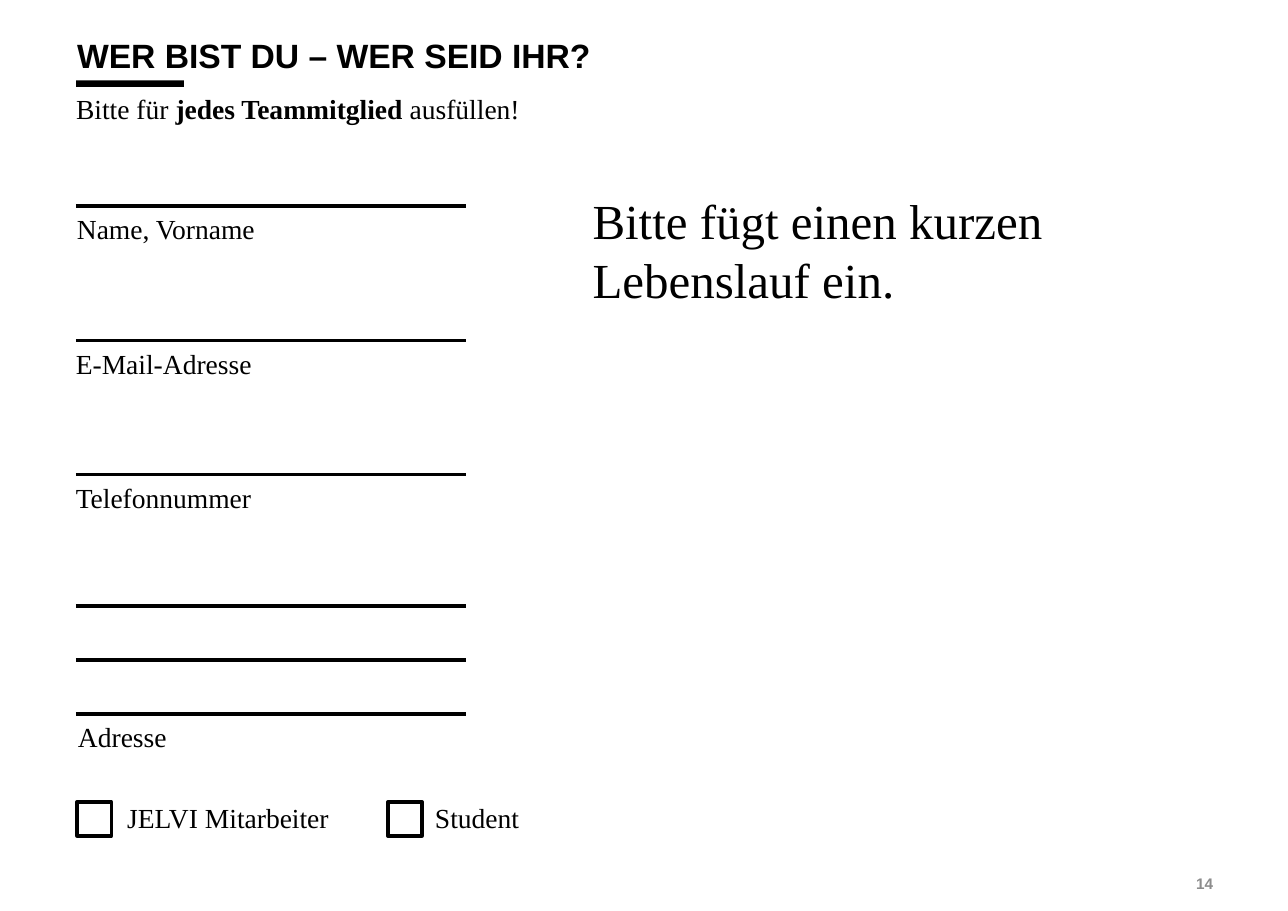
from lxml.etree import SubElement
from pptx import Presentation
from pptx.dml.color import RGBColor
from pptx.enum.shapes import MSO_CONNECTOR, MSO_SHAPE
from pptx.enum.text import MSO_ANCHOR, MSO_AUTO_SIZE, PP_ALIGN
from pptx.oxml.ns import qn
from pptx.util import Inches, Pt

BLACK = RGBColor(0, 0, 0)
WHITE = RGBColor(255, 255, 255)
GREY = RGBColor(0x8C, 0x8C, 0x8C)
SERIF = "Times New Roman"


def add_box(left, top, width, height):
    box = slide.shapes.add_shape(
        MSO_SHAPE.RECTANGLE, Inches(left), Inches(top), Inches(width), Inches(height))
    box.shadow.inherit = False
    box.fill.solid()
    box.fill.fore_color.rgb = WHITE
    box.line.fill.background()
    return box


def style_text(frame, size, font=SERIF, color=BLACK, align=PP_ALIGN.LEFT, anchor=MSO_ANCHOR.MIDDLE):
    frame.word_wrap = True
    frame.auto_size = MSO_AUTO_SIZE.NONE
    frame.vertical_anchor = anchor
    paragraph = frame.paragraphs[0]
    paragraph.alignment = align
    paragraph.font.size = Pt(size)
    paragraph.font.name = font
    paragraph.font.color.rgb = color
    return paragraph


presentation = Presentation()
presentation.slide_width = Inches(11.69)
presentation.slide_height = Inches(8.27)
slide = presentation.slides.add_slide(presentation.slide_layouts[1])

accent_bar = add_box(0.69, 0.73, 0.98, 0.06)
accent_bar.fill.fore_color.rgb = BLACK

page_number = slide.shapes.add_textbox(Inches(8.88), Inches(7.84), Inches(2.23), Inches(0.35))
page_number.text_frame.text = "14"
number_line = style_text(page_number.text_frame, 10, "Arial", GREY, PP_ALIGN.RIGHT)
number_line.font.bold = True

heading = slide.shapes.title
heading.text_frame.text = "WER BIST DU – WER SEID IHR?"
heading_line = style_text(heading.text_frame, 22, "Arial", anchor=MSO_ANCHOR.TOP)
heading_line.font.bold = True

instruction = slide.placeholders[1]
instruction_line = instruction.text_frame.paragraphs[0]
for text, bold in [("Bitte für ", False), ("jedes Teammitglied ", True), ("ausfüllen!", False)]:
    run = instruction_line.add_run()
    run.text = text
    run.font.bold = bold
properties = instruction_line._p.get_or_add_pPr()
properties.set("marL", "0")
properties.set("indent", "0")
SubElement(properties, qn("a:buNone"))
style_text(instruction.text_frame, 18, anchor=MSO_ANCHOR.TOP)

for placeholder, left, top in [(heading, 0.6, 0.31), (instruction, 0.59, 0.82)]:
    placeholder.left, placeholder.top = Inches(left), Inches(top)
    placeholder.width, placeholder.height = Inches(7.71), Inches(0.31)
    line = placeholder.text_frame.paragraphs[0]
    line.line_spacing = 0.9
    line.space_before = Pt(0)

for text, left, top, width, align in [
    ("Name, Vorname", 0.6, 1.87, 2.07, PP_ALIGN.LEFT),
    ("E-Mail-Adresse", 0.59, 3.09, 2.07, PP_ALIGN.LEFT),
    ("Telefonnummer", 0.59, 4.31, 2.07, PP_ALIGN.LEFT),
    ("Adresse", 0.61, 6.48, 2.07, PP_ALIGN.LEFT),
    ("JELVI Mitarbeiter", 0.94, 7.22, 2.26, PP_ALIGN.CENTER),
    ("Student", 3.79, 7.22, 1.02, PP_ALIGN.RIGHT),
]:
    label = add_box(left, top, width, 0.41)
    label.text_frame.text = text
    style_text(label.text_frame, 18, align=align)

for left in (0.7, 3.52):
    checkbox = add_box(left, 7.28, 0.31, 0.31)
    checkbox.fill.background()
    checkbox.line.color.rgb = BLACK
    checkbox.line.width = Pt(2.25)

resume_request = add_box(5.28, 1.68, 4.56, 2.39)
resume_request.text_frame.text = "Bitte fügt einen kurzen Lebenslauf ein."
style_text(resume_request.text_frame, 32, anchor=MSO_ANCHOR.TOP)

for top in (1.87, 3.09, 4.31, 5.5, 5.99, 6.48):
    writing_line = slide.shapes.add_connector(
        MSO_CONNECTOR.STRAIGHT, Inches(0.69), Inches(top), Inches(4.23), Inches(top))
    writing_line.line.color.rgb = BLACK
    writing_line.line.width = Pt(2.25)
    SubElement(writing_line._element.spPr, qn("a:effectLst"))

presentation.save("out.pptx")
